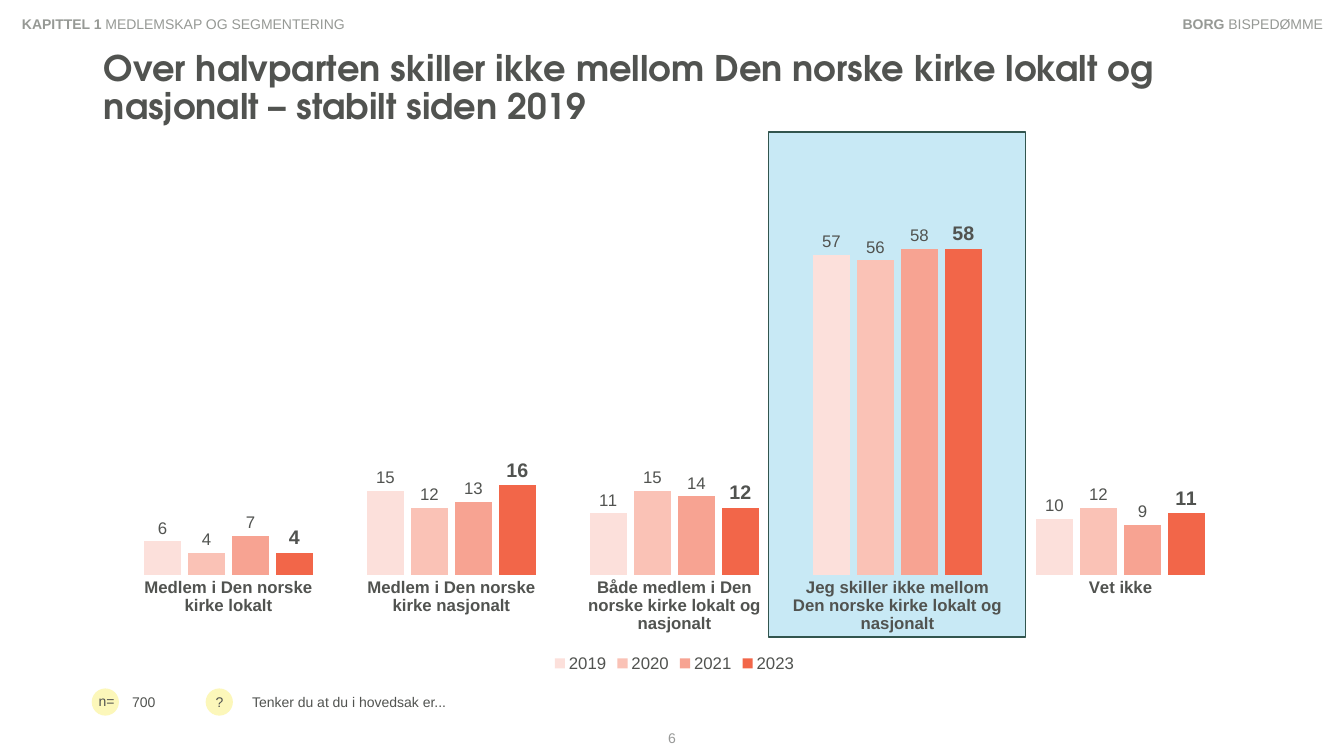
from lxml import etree
from pptx import Presentation
from pptx.chart.data import CategoryChartData
from pptx.dml.color import RGBColor
from pptx.enum.chart import (XL_CHART_TYPE, XL_LABEL_POSITION,
                             XL_LEGEND_POSITION, XL_TICK_MARK)
from pptx.enum.shapes import MSO_SHAPE
from pptx.enum.text import MSO_ANCHOR, MSO_AUTO_SIZE, PP_ALIGN
from pptx.oxml.ns import qn
from pptx.util import Inches, Pt

COLUMNS = XL_CHART_TYPE.COLUMN_CLUSTERED
OUTSIDE_END = XL_LABEL_POSITION.OUTSIDE_END
LEGEND_BOTTOM = XL_LEGEND_POSITION.BOTTOM
NO_TICK = XL_TICK_MARK.NONE
RECTANGLE, OVAL = MSO_SHAPE.RECTANGLE, MSO_SHAPE.OVAL
TOP, MIDDLE, BOTTOM = MSO_ANCHOR.TOP, MSO_ANCHOR.MIDDLE, MSO_ANCHOR.BOTTOM
LEFT, CENTER, RIGHT = PP_ALIGN.LEFT, PP_ALIGN.CENTER, PP_ALIGN.RIGHT

WIDTH, HEIGHT = 13.33, 7.5
MARGIN, CONTENT_WIDTH = 0.93, 11.52
BADGE = 0.27
DARK, GREY, PAGE_GREY = "515350", "969995", "989998"
HEADING_FONT, TEXT_FONT = "TeX Gyre Adventor", "Arial"

ANSWERS = ["Medlem i Den norske kirke lokalt",
           "Medlem i Den norske kirke nasjonalt",
           "Både medlem i Den norske kirke lokalt og nasjonalt",
           "Jeg skiller ikke mellom Den norske kirke lokalt og nasjonalt",
           "Vet ikke"]
# year, values, bar colour, label size, bold label
YEARS = [("2019", (6, 15, 11, 57, 10), "FCE0DB", 12, False),
         ("2020", (4, 12, 15, 56, 12), "FAC2B6", 12, False),
         ("2021", (7, 13, 14, 58, 9), "F7A392", 12, False),
         ("2023", (4, 16, 12, 58, 11), "F26649", 14, True)]


def color(value):
    return RGBColor.from_string(value)


def style_font(font, size, tint=DARK, bold=False, name=TEXT_FONT):
    font.name, font.size, font.bold = name, Pt(size), bold
    font.color.rgb = color(tint)


def place(shape, box):
    shape.left, shape.top, shape.width, shape.height = map(Inches, box)


def write(shape, spans, size=10, tint=DARK, align=LEFT, anchor=TOP,
          name=TEXT_FONT):
    """Fill a shape with one paragraph of (text, bold) spans."""
    frame = shape.text_frame
    frame.word_wrap = True
    frame.auto_size = MSO_AUTO_SIZE.NONE
    frame.vertical_anchor = anchor
    para = frame.paragraphs[0]
    para.alignment = align
    for text, bold in spans:
        span = para.add_run()
        span.text = text
        style_font(span.font, size, tint, bold, name)
    return para


def add_label(page, box, spans, **options):
    write(page.shapes.add_textbox(*map(Inches, box)), spans, **options)


def add_plain_shape(page, kind, box, fill, line=None):
    shape = page.shapes.add_shape(kind, *map(Inches, box))
    shape.shadow.inherit = False
    shape.fill.solid()
    shape.fill.fore_color.rgb = color(fill)
    if line:
        shape.line.color.rgb = color(line)
        shape.line.width = Pt(1)
    else:
        shape.line.fill.background()


def add_header(page, top):
    add_label(page, (0.12, top, 5.64, BADGE),
              [("KAPITTEL 1 ", True), ("MEDLEMSKAP OG SEGMENTERING", False)],
              tint=GREY)
    add_label(page, (11.12, top, 2.1, BADGE),
              [("BORG ", True), ("BISPEDØMME", False)],
              tint=GREY, align=RIGHT)


def add_title(page, box, text):
    title = page.shapes.title
    place(title, box)
    para = write(title, [(text, True)], size=25.2, anchor=BOTTOM,
                 name=HEADING_FONT)
    para.line_spacing = 0.9


def set_plot_area(chart, **shares):
    """Fix the inner plot area as shares of the chart's box."""
    plot_area = chart._chartSpace.chart.plotArea
    layout = plot_area.find(qn("c:layout"))
    if layout is None:
        layout = etree.Element(qn("c:layout"))
        plot_area.insert(0, layout)
    manual = etree.SubElement(layout, qn("c:manualLayout"))
    settings = {"layoutTarget": "inner", "xMode": "edge", "yMode": "edge",
                **shares}
    for tag, value in settings.items():
        etree.SubElement(manual, qn("c:" + tag)).set("val", str(value))


def add_answer_chart(page, box):
    data = CategoryChartData(number_format="0")
    data.categories = ANSWERS
    for year, values, *_ in YEARS:
        data.add_series(year, values)
    chart = page.shapes.add_chart(COLUMNS, *map(Inches, box), data).chart
    style_font(chart.font, 10)
    chart.has_title = False
    set_plot_area(chart, x=0.02, y=0.02, w=0.96, h=0.78)

    # Axes and legend
    chart.value_axis.visible = False
    chart.value_axis.has_major_gridlines = False
    chart.value_axis.minimum_scale = 0
    chart.value_axis.maximum_scale = 70
    axis = chart.category_axis
    axis.major_tick_mark = axis.minor_tick_mark = NO_TICK
    axis.format.line.fill.background()
    style_font(axis.tick_labels.font, 12, bold=True)
    chart.has_legend = True
    chart.legend.position = LEGEND_BOTTOM
    chart.legend.include_in_layout = False
    style_font(chart.legend.font, 12)

    # Bars and their labels
    plot = chart.plots[0]
    plot.vary_by_categories = False
    plot.gap_width, plot.overlap = 142, -17
    for series, (_, _, tint, size, bold) in zip(plot.series, YEARS):
        series.format.fill.solid()
        series.format.fill.fore_color.rgb = color(tint)
        labels = series.data_labels
        labels.show_value = True
        labels.number_format = "0"
        labels.number_format_is_linked = False
        labels.position = OUTSIDE_END
        style_font(labels.font, size, bold=bold)


def add_note(page, left, top, badge, badge_box, body, body_box, text):
    """Round badge followed by its note in a body placeholder."""
    add_plain_shape(page, OVAL, (left, top, BADGE, BADGE), "FCF7BA")
    add_label(page, badge_box, [(badge, False)])
    place(body, body_box)
    para = write(body, [(text, False)], anchor=MIDDLE)
    para.space_before = Pt(0)
    properties = para._p.get_or_add_pPr()
    properties.set("marL", "0")
    properties.set("indent", "0")
    etree.SubElement(properties, qn("a:buNone"))


def add_footer(page, top):
    sample, question = page.placeholders[1], page.placeholders[2]
    add_note(page, 0.91, top, "n=", (0.88, top - 0.01, 0.45, BADGE),
             sample, (1.21, top, 0.74, BADGE), "700")
    add_note(page, 2.04, top, "?", (2.04, top, 0.25, BADGE),
             question, (2.4, top - 0.16, 10.05, 0.58),
             "Tenker du at du i hovedsak er...")
    add_label(page, (6.29, HEIGHT - 0.35, 0.75, 0.35), [("6", False)],
              tint=PAGE_GREY, align=CENTER, anchor=MIDDLE)


def main():
    deck = Presentation()
    deck.slide_width, deck.slide_height = Inches(WIDTH), Inches(HEIGHT)
    page = deck.slides.add_slide(deck.slide_layouts[3])
    add_header(page, 0.1)
    add_title(page, (MARGIN, 0.39, CONTENT_WIDTH, 0.92),
              "Over halvparten skiller ikke mellom Den norske kirke lokalt "
              "og nasjonalt – stabilt siden 2019")
    # Highlight behind the fourth answer
    add_plain_shape(page, RECTANGLE, (7.62, 1.31, 2.55, 5.01),
                    "C8E9F5", "32554E")
    add_answer_chart(page, (MARGIN, 1.7, CONTENT_WIDTH, 5.01))
    add_footer(page, 6.83)
    deck.save("out.pptx")


if __name__ == "__main__":
    main()
